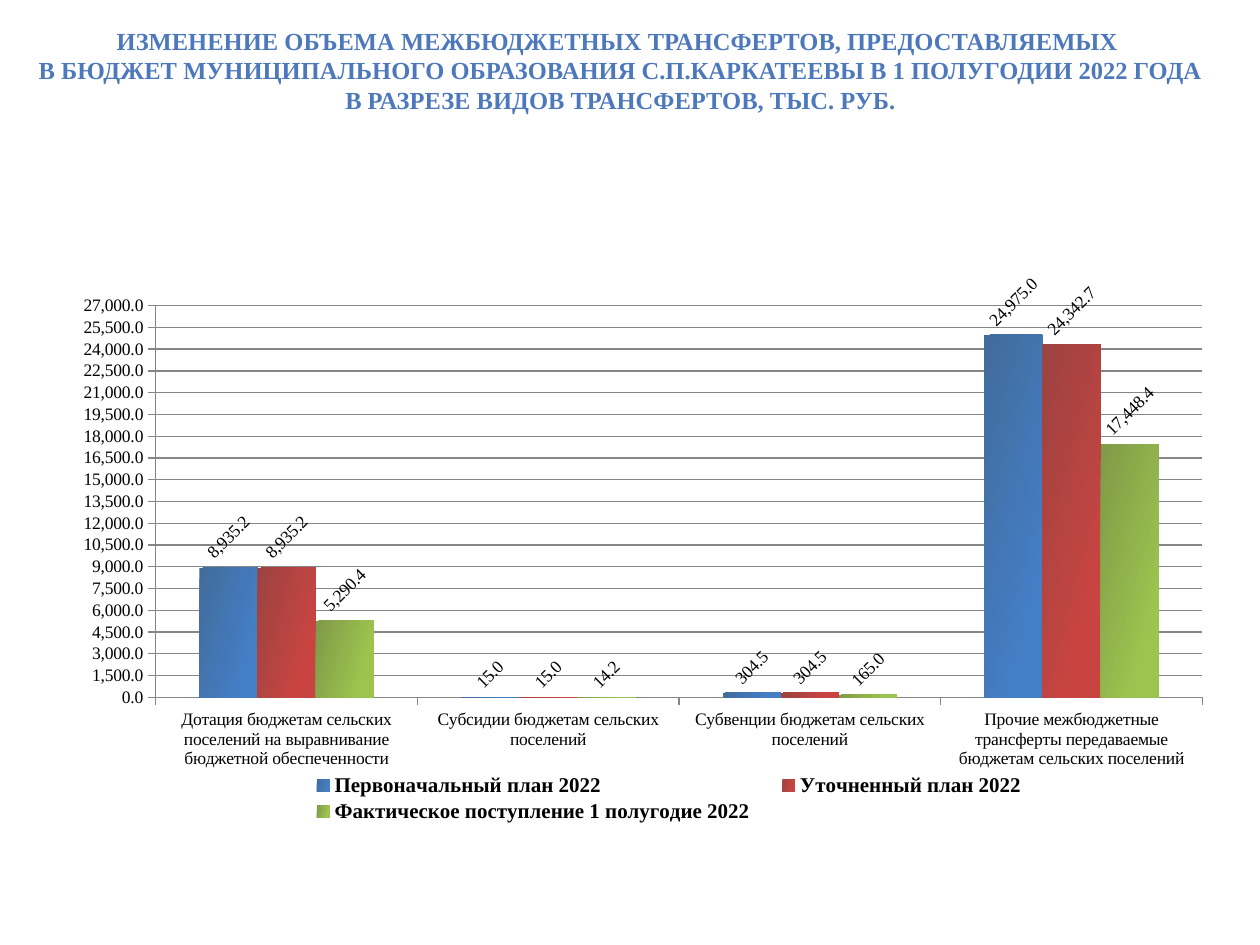
from dataclasses import dataclass

from lxml import etree
from pptx import Presentation
from pptx.chart.data import CategoryChartData
from pptx.dml.color import RGBColor as RGB
from pptx.enum.chart import XL_CHART_TYPE as ChartType
from pptx.enum.chart import XL_LABEL_POSITION as LabelPos
from pptx.enum.chart import XL_LEGEND_POSITION as LegendPos
from pptx.enum.chart import XL_TICK_MARK as Tick
from pptx.enum.text import MSO_ANCHOR as Anchor
from pptx.enum.text import PP_ALIGN as Align
from pptx.oxml.ns import qn
from pptx.util import Inches, Pt


@dataclass(frozen=True)
class Theme:
    font: str = "Times New Roman"
    title_color: str = "4D79BC"
    text_color: str = "000000"
    line_color: str = "868686"
    title_size: int = 14
    chart_size: int = 10
    legend_size: int = 12
    number_format: str = "#,##0.0"


@dataclass(frozen=True)
class BarSeries:
    name: str
    values: tuple[float, ...]
    dark: str
    light: str


THEME = Theme()
TITLE_LINES = (
    "ИЗМЕНЕНИЕ ОБЪЕМА МЕЖБЮДЖЕТНЫХ ТРАНСФЕРТОВ, ПРЕДОСТАВЛЯЕМЫХ ",
    "В БЮДЖЕТ МУНИЦИПАЛЬНОГО ОБРАЗОВАНИЯ С.П.КАРКАТЕЕВЫ В 1 ПОЛУГОДИИ 2022 ГОДА "
    "В РАЗРЕЗЕ ВИДОВ ТРАНСФЕРТОВ, ТЫС. РУБ.",
)
CATEGORIES = (
    "Дотация бюджетам сельских поселений на выравнивание бюджетной обеспеченности",
    "Субсидии бюджетам сельских поселений",
    "Субвенции бюджетам сельских поселений",
    "Прочие межбюджетные трансферты передаваемые бюджетам сельских поселений",
)
SERIES = (
    BarSeries("Первоначальный план 2022", (8935.2, 15, 304.5, 24975), "426B9B", "447FC6"),
    BarSeries("Уточненный план 2022", (8935.2, 15, 304.5, 24342.7), "9C4341", "C94441"),
    BarSeries("Фактическое поступление 1 полугодие 2022", (5290.4, 14.2, 165, 17448.4),
              "7F9A48", "9DC44F"),
)


def style_font(font, size: int, color: str, bold: bool = False) -> None:
    font.name, font.size, font.bold = THEME.font, Pt(size), bold
    font.color.rgb = RGB.from_string(color)


def add_title(slide) -> None:
    title = slide.shapes.title
    title.left, title.top = Inches(0.12), Inches(0.13)
    title.width, title.height = Inches(9.61), Inches(0.85)
    tf = title.text_frame
    tf.word_wrap, tf.vertical_anchor = True, Anchor.MIDDLE
    tf.margin_left = tf.margin_right = Inches(0.11)
    tf.margin_top = tf.margin_bottom = Inches(0.06)
    p = tf.paragraphs[0]
    p.alignment = Align.CENTER
    for i, line in enumerate(TITLE_LINES):
        if i:
            p.add_line_break()
        r = p.add_run()
        r.text = line
        style_font(r.font, THEME.title_size, THEME.title_color, bold=True)


def set_layout(parent, position: int, box: tuple[float, ...], inner: bool = False) -> None:
    """Place a chart part by fractions of the chart area."""
    for old in parent.findall(qn("c:layout")):
        parent.remove(old)
    layout = etree.Element(qn("c:layout"))
    manual = etree.SubElement(layout, qn("c:manualLayout"))
    entries = [("layoutTarget", "inner")] if inner else []
    entries += [("xMode", "edge"), ("yMode", "edge")]
    entries += [(key, str(value)) for key, value in zip("xywh", box)]
    for tag, value in entries:
        etree.SubElement(manual, qn(f"c:{tag}")).set("val", value)
    parent.insert(position, layout)


def style_series(series, style: BarSeries) -> None:
    fill = series.format.fill
    fill.gradient()
    fill.gradient_angle = 345
    for stop, color, position in zip(fill.gradient_stops, (style.dark, style.light), (0, 0.8)):
        stop.color.rgb = RGB.from_string(color)
        stop.position = position
    # Slanted value labels
    labels = series.data_labels
    labels.show_value = True
    labels.number_format, labels.number_format_is_linked = THEME.number_format, False
    labels.position = LabelPos.OUTSIDE_END
    style_font(labels.font, THEME.chart_size, THEME.text_color)
    body = labels._element.find(qn("c:txPr")).find(qn("a:bodyPr"))
    body.set("rot", "-2700000")
    body.set("vert", "horz")


def add_transfer_chart(slide) -> None:
    data = CategoryChartData(number_format=THEME.number_format)
    data.categories = CATEGORIES
    for item in SERIES:
        data.add_series(item.name, item.values)
    chart = slide.shapes.add_chart(
        ChartType.COLUMN_CLUSTERED, Inches(0.47), Inches(2.11),
        Inches(9.22), Inches(4.45), data).chart
    chart.has_title = False
    style_font(chart.font, THEME.chart_size, THEME.text_color)

    # Columns
    plot = chart.plots[0]
    plot.gap_width, plot.overlap, plot.vary_by_categories = 150, 0, False
    for series, style in zip(plot.series, SERIES):
        style_series(series, style)

    # Axes and gridlines
    value_axis = chart.value_axis
    value_axis.minimum_scale, value_axis.maximum_scale = 0, 27000
    value_axis.major_unit = 1500
    value_axis.has_major_gridlines = True
    labels = value_axis.tick_labels
    labels.number_format, labels.number_format_is_linked = THEME.number_format, False
    for axis in (chart.category_axis, value_axis):
        axis.major_tick_mark = Tick.OUTSIDE
        style_font(axis.tick_labels.font, THEME.chart_size, THEME.text_color)
    for part in (chart.category_axis, value_axis, value_axis.major_gridlines):
        part.format.line.color.rgb = RGB.from_string(THEME.line_color)
        part.format.line.width = Pt(0.75)

    # Legend
    chart.has_legend = True
    legend = chart.legend
    legend.position, legend.include_in_layout = LegendPos.BOTTOM, False
    style_font(legend.font, THEME.legend_size, THEME.text_color, bold=True)

    plot_area = chart._chartSpace.chart.plotArea
    set_layout(plot_area, 0, (0.083, 0.071, 0.901, 0.699), inner=True)
    set_layout(legend._element, 1, (0.2, 0.9, 0.65, 0.1))


def main() -> None:
    prs = Presentation()
    prs.slide_width, prs.slide_height = Inches(10), Inches(7.5)
    slide = prs.slides.add_slide(prs.slide_layouts[5])
    add_title(slide)
    add_transfer_chart(slide)
    prs.save("out.pptx")


if __name__ == "__main__":
    main()
